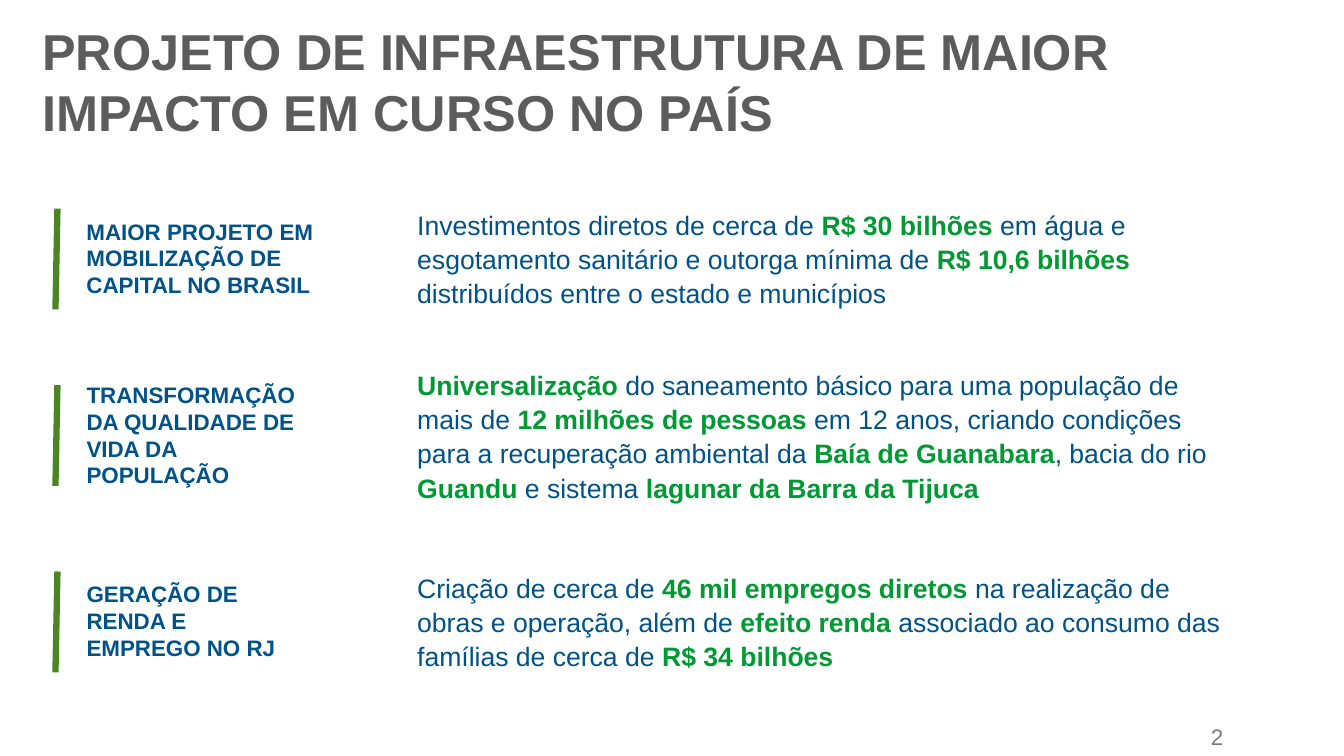
from lxml.etree import SubElement
from pptx import Presentation
from pptx.dml.color import RGBColor
from pptx.enum.shapes import MSO_CONNECTOR
from pptx.enum.text import MSO_ANCHOR
from pptx.oxml.ns import qn
from pptx.util import Inches, Pt

BLUE = RGBColor(0x00, 0x52, 0x87)
GREEN = RGBColor(0x00, 0x99, 0x33)
BAR_GREEN = RGBColor(0x4C, 0x86, 0x22)
TITLE_GRAY = RGBColor(0x5C, 0x5C, 0x5C)
NUMBER_GRAY = RGBColor(0x7B, 0x7B, 0x7B)

IMPACTS = [
    (2.0, 1.13, 2.07, 2.11, 2.77, 0.91,
     "MAIOR PROJETO EM MOBILIZAÇÃO DE CAPITAL NO BRASIL",
     ["Investimentos diretos de cerca de ", "R$ 30 bilhões ",
      "em água e esgotamento sanitário e outorga mínima de ",
      "R$ 10,6 bilhões ", "distribuídos entre o estado e municípios"]),
    (3.59, 1.47, 3.82, 3.73, 2.35, 1.18,
     "TRANSFORMAÇÃO DA QUALIDADE DE VIDA DA POPULAÇÃO",
     ["", "Universalização",
      " do saneamento básico para uma população de mais de ",
      "12 milhões de pessoas ",
      "em 12 anos, criando condições para a recuperação ambiental da ",
      "Baía de Guanabara", ", bacia do rio ", "Guandu", " e sistema ",
      "lagunar da Barra da Tijuca"]),
    (5.6, 1.13, 5.67, 5.71, 2.35, 0.91,
     "GERAÇÃO DE RENDA E EMPREGO NO RJ",
     ["Criação de cerca de ", "46 mil empregos diretos ",
      "na realização de obras e operação, além de ", "efeito renda ",
      "associado ao consumo das famílias de cerca de ", "R$ 34 bilhões"]),
]


def add_text(slide, left, top, width, height, size, color, text="",
             bold=None, inset=None):
    frame = slide.shapes.add_textbox(
        Inches(left), Inches(top), Inches(width), Inches(height)).text_frame
    frame.word_wrap = True
    if inset is not None:
        frame.margin_left = frame.margin_right = Inches(inset)
        frame.margin_top = frame.margin_bottom = Inches(inset)
    paragraph = frame.paragraphs[0]
    if text:
        paragraph.add_run().text = text
    paragraph.font.name = "Arial"
    paragraph.font.size = Pt(size)
    paragraph.font.bold = bold
    paragraph.font.color.rgb = color
    return frame


def add_title(slide, left, top, width, height):
    title = add_text(slide, left, top, width, height, 36, TITLE_GRAY,
                     "PROJETO DE INFRAESTRUTURA DE MAIOR IMPACTO EM CURSO NO PAÍS",
                     True, 0.06)
    title.vertical_anchor = MSO_ANCHOR.MIDDLE


def add_bar(slide, left, top):
    bar = slide.shapes.add_connector(
        MSO_CONNECTOR.STRAIGHT, Inches(left + 0.02), Inches(top),
        Inches(left), Inches(top + 1))
    bar.line.color.rgb = BAR_GREEN
    bar.line.width = Pt(4.5)
    SubElement(bar._element.spPr, qn("a:effectLst"))


def add_description(slide, left, top, width, height, phrases):
    paragraph = add_text(slide, left, top, width, height, 19, BLUE).paragraphs[0]
    paragraph.line_spacing = 1.07
    paragraph.space_after = Pt(8)
    for index, phrase in enumerate(phrases):
        if not phrase:
            continue
        run = paragraph.add_run()
        run.text = phrase
        if index % 2:
            run.font.bold = True
            run.font.color.rgb = GREEN


def add_impact(slide, left, impact):
    (top, height, bar_top, heading_top, heading_width, heading_height,
     heading, phrases) = impact
    add_bar(slide, left, bar_top)
    add_text(slide, left + 0.21, heading_top, heading_width, heading_height,
             16, BLUE, heading, True)
    add_description(slide, left + 3.49, top, 8.23, height, phrases)


def main():
    deck = Presentation()
    deck.slide_width, deck.slide_height = Inches(13.33), Inches(7.5)
    slide = deck.slides.add_slide(deck.slide_layouts[6])
    add_title(slide, 0.36, 0.14, 12.12, 1.32)
    for impact in IMPACTS:
        add_impact(slide, 0.55, impact)
    add_text(slide, 11.96, 7.12, 1.38, 0.37, 16, NUMBER_GRAY, "2", inset=0.05)
    deck.save("out.pptx")


if __name__ == "__main__":
    main()
